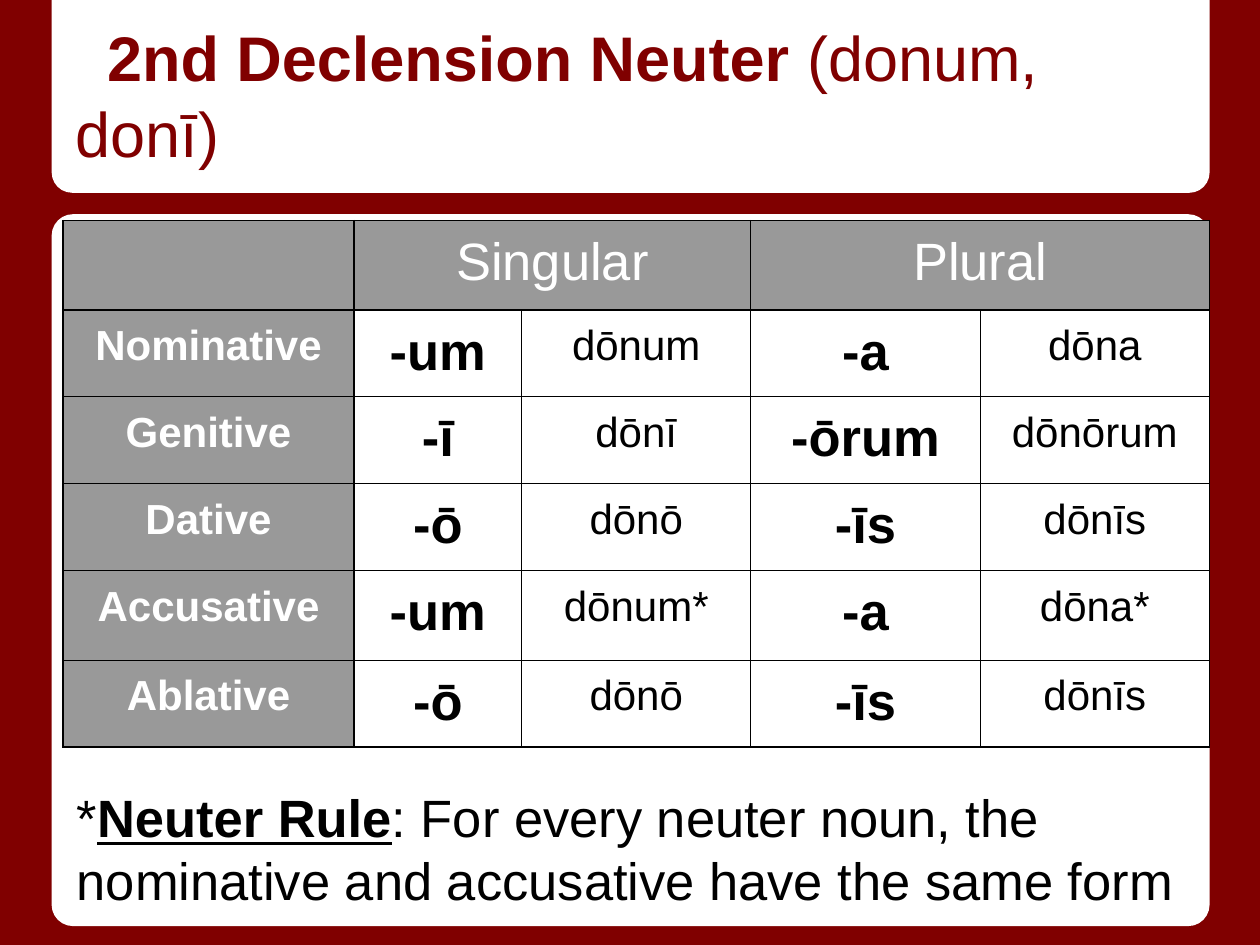
"""Build a slide showing the second declension neuter endings in a table."""
from lxml.etree import SubElement
from pptx import Presentation
from pptx.dml.color import RGBColor
from pptx.enum.shapes import MSO_SHAPE
from pptx.enum.text import MSO_ANCHOR, MSO_AUTO_SIZE, PP_ALIGN
from pptx.oxml import parse_xml
from pptx.oxml.ns import nsdecls
from pptx.util import Inches, Pt

MAROON = RGBColor(0x80, 0x00, 0x00)
GRAY = RGBColor(0x99, 0x99, 0x99)
WHITE = RGBColor(0xFF, 0xFF, 0xFF)
BLACK = RGBColor(0x00, 0x00, 0x00)
FONT = "Arial"

TITLE = [("2nd Declension Neuter ", True), ("(donum, donī)", False)]
HEADINGS = {1: "Singular", 3: "Plural"}
CASES = [
    ("Nominative", "-um", "dōnum", "-a", "dōna"),
    ("Genitive", "-ī", "dōnī", "-ōrum", "dōnōrum"),
    ("Dative", "-ō", "dōnō", "-īs", "dōnīs"),
    ("Accusative", "-um", "dōnum*", "-a", "dōna*"),
    ("Ablative", "-ō", "dōnō", "-īs", "dōnīs"),
]
RULE = [
    ("*", False),
    ("Neuter Rule", True),
    (": For every neuter noun, the nominative and accusative have the same form", False),
]
COL_WIDTHS = [2.31, 1.33, 1.82, 1.82, 1.82]
ROW_HEIGHTS = [0.71, 0.69, 0.69, 0.69, 0.71, 0.69]
PANELS = [
    (MSO_SHAPE.ROUNDED_RECTANGLE, 1.7, 5.65, 0, [0.03]),
    (MSO_SHAPE.ROUND_2_SAME_RECTANGLE, 0, 1.53, 180, [0.106, 0]),
]


def set_insets(obj):
    obj.margin_left = obj.margin_right = Inches(0.1)
    obj.margin_top = obj.margin_bottom = Inches(0.1)


def set_font(p, size, color):
    p.font.name, p.font.size, p.font.color.rgb = FONT, Pt(size), color


def add_runs(p, runs):
    for text, bold in runs:
        r = p.add_run()
        r.text, r.font.bold = text, bold
        yield r


def add_panel(s, kind, top, height, rotation, adjustments):
    sp = s.shapes.add_shape(kind, Inches(0.41), Inches(top), Inches(9.19), Inches(height))
    sp.rotation = rotation
    for i, value in enumerate(adjustments):
        sp.adjustments[i] = value
    sp.shadow.inherit = False
    sp.fill.solid()
    sp.fill.fore_color.rgb = WHITE
    sp.line.fill.background()


def add_title(s):
    sp = s.shapes.title
    s.shapes._spTree.append(sp._element)
    sp.left, sp.top, sp.width, sp.height = Inches(0.5), Inches(0.2), Inches(9), Inches(1.25)
    tf = sp.text_frame
    set_insets(tf)
    tf.vertical_anchor, tf.auto_size = MSO_ANCHOR.BOTTOM, MSO_AUTO_SIZE.NONE
    p = tf.paragraphs[0]
    p.alignment = PP_ALIGN.LEFT
    set_font(p, 36, MAROON)
    list(add_runs(p, TITLE))
    pPr = p._p.get_or_add_pPr()
    pPr.set("marL", "0")
    pPr.set("indent", str(Inches(0.25)))


def style_cell(cell, shaded):
    set_insets(cell)
    tcPr = cell._tc.get_or_add_tcPr()
    for side in ("lnL", "lnR", "lnT", "lnB"):
        tcPr.append(parse_xml(
            f'<a:{side} {nsdecls("a")} w="{Pt(0.75)}"><a:solidFill>'
            f'<a:srgbClr val="{BLACK}"/></a:solidFill></a:{side}>'))
    if shaded:
        cell.fill.solid()
        cell.fill.fore_color.rgb = GRAY
    else:
        cell.fill.background()


def write_cell(cell, text, size, color, bold):
    cell.text = text
    p = cell.text_frame.paragraphs[0]
    p.alignment = PP_ALIGN.CENTER
    set_font(p, size, color)
    p.font.bold = bold


def add_declension_table(s):
    table = s.shapes.add_table(
        len(ROW_HEIGHTS), len(COL_WIDTHS), Inches(0.5), Inches(1.75),
        Inches(sum(COL_WIDTHS)), Inches(sum(ROW_HEIGHTS))).table
    for column, width in zip(table.columns, COL_WIDTHS):
        column.width = Inches(width)
    for row, height in zip(table.rows, ROW_HEIGHTS):
        row.height = Inches(height)
    for i in range(len(ROW_HEIGHTS)):
        for j in range(len(COL_WIDTHS)):
            style_cell(table.cell(i, j), i == 0 or j == 0)
    for j, text in HEADINGS.items():
        table.cell(0, j).merge(table.cell(0, j + 1))
        write_cell(table.cell(0, j), text, 30, WHITE, False)
    for i, forms in enumerate(CASES, 1):
        for j, text in enumerate(forms):
            ending = j % 2 == 1
            write_cell(table.cell(i, j), text, 30 if ending else 24,
                       BLACK if j else WHITE, ending or j == 0)


def add_rule(s):
    sp = s.shapes.add_textbox(Inches(0.51), Inches(6.13), Inches(9.08), Inches(0.89))
    tf = sp.text_frame
    tf.word_wrap = True
    set_insets(tf)
    p = tf.paragraphs[0]
    set_font(p, 30, BLACK)
    for r in add_runs(p, RULE):
        r.font.underline = r.font.bold


def main():
    prs = Presentation()
    prs.slide_width, prs.slide_height = Inches(10), Inches(7.5)
    s = prs.slides.add_slide(prs.slide_layouts[5])
    s.background.fill.solid()
    s.background.fill.fore_color.rgb = MAROON
    for panel in PANELS:
        add_panel(s, *panel)
    add_title(s)
    add_declension_table(s)
    add_rule(s)
    prs.save("out.pptx")


if __name__ == "__main__":
    main()
